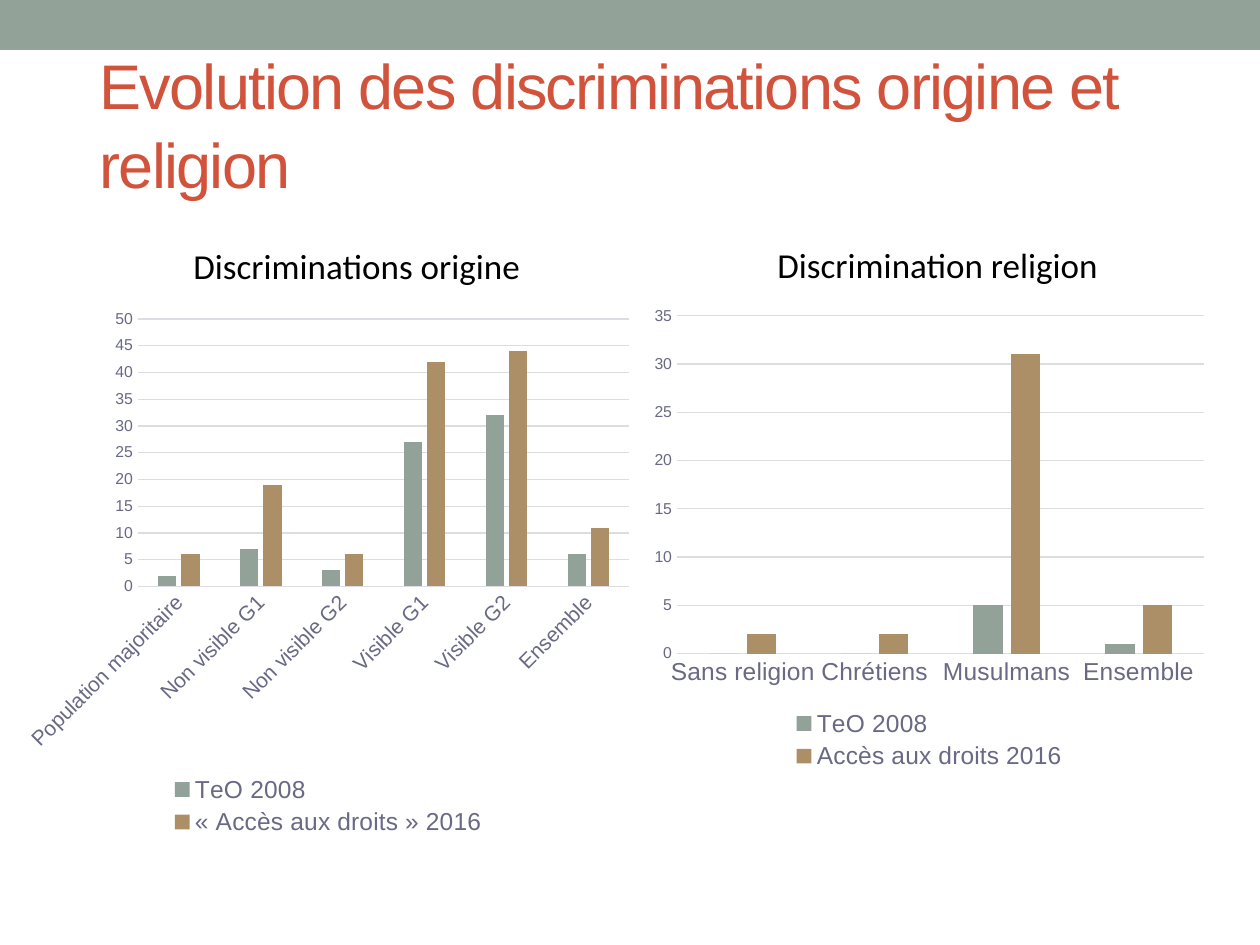
import dataclasses

import pptx
import pptx.chart.data
import pptx.dml.color
import pptx.enum.chart
import pptx.enum.shapes
import pptx.enum.text
import pptx.util

EMU_PER_PX = 914400 / 126
SAGE, TAN, RED = "93A299", "AD8F67", "D2533C"
BLACK, INK, LABEL, GRID = "000000", "292934", "696986", "DCDCE3"


@dataclasses.dataclass
class Box:
    x: int
    y: int
    w: int
    h: int

    def emu(self) -> list[int]:
        return [round(v * EMU_PER_PX) for v in dataclasses.astuple(self)]


@dataclasses.dataclass
class Panel:
    heading: str
    heading_box: Box
    chart_box: Box
    categories: list[str]
    series: dict[str, list[int]]
    axis_max: int
    category_size: int


PANELS = [
    Panel("Discriminations origine", Box(181, 238, 355, 55), Box(15, 299, 627, 542),
          ["Population majoritaire", "Non visible G1", "Non visible G2",
           "Visible G1", "Visible G2", "Ensemble"],
          {"TeO 2008": [2, 7, 3, 27, 32, 6],
           "« Accès aux droits » 2016": [6, 19, 6, 42, 44, 11]}, 50, 12),
    Panel("Discrimination religion", Box(765, 237, 349, 55), Box(643, 297, 573, 478),
          ["Sans religion", "Chrétiens", "Musulmans", "Ensemble"],
          {"TeO 2008": [0, 0, 5, 1],
           "Accès aux droits 2016": [2, 2, 31, 5]}, 35, 14),
]


def rgb(value: str) -> pptx.dml.color.RGBColor:
    return pptx.dml.color.RGBColor.from_string(value)


def set_font(font, size: int, color: str, name: str = "Arial") -> None:
    font.size = pptx.util.Pt(size)
    font.name = name
    font.color.rgb = rgb(color)


def write(tf, text: str, *, size: int, color: str, name: str = "Arial",
          wrap: bool = True, anchor=pptx.enum.text.MSO_ANCHOR.TOP,
          tracking: int = 0, line_spacing: float = 1.0) -> None:
    tf.word_wrap = wrap
    tf.auto_size = pptx.enum.text.MSO_AUTO_SIZE.NONE
    tf.vertical_anchor = anchor
    p = tf.paragraphs[0]
    p.alignment = pptx.enum.text.PP_ALIGN.LEFT
    p.line_spacing = line_spacing
    r = p.add_run()
    r.text = text
    set_font(r.font, size, color, name)
    if tracking:
        r.font._element.set("spc", str(tracking))


def style_line(line, color: str) -> None:
    line.color.rgb = rgb(color)
    line.width = pptx.util.Pt(0.75)


def add_band(s, box: Box, color: str) -> None:
    sp = s.shapes.add_shape(pptx.enum.shapes.MSO_SHAPE.RECTANGLE, *box.emu())
    sp.shadow.inherit = False
    sp.fill.solid()
    sp.fill.fore_color.rgb = rgb(color)
    sp.line.fill.background()


def add_column_chart(s, panel: Panel) -> None:
    data = pptx.chart.data.CategoryChartData()
    data.categories = panel.categories
    for name, values in panel.series.items():
        data.add_series(name, values)
    chart = s.shapes.add_chart(pptx.enum.chart.XL_CHART_TYPE.COLUMN_CLUSTERED,
                               *panel.chart_box.emu(), data).chart
    set_font(chart.font, 10, INK)
    chart.has_title = False

    # Legend
    chart.has_legend = True
    chart.legend.position = pptx.enum.chart.XL_LEGEND_POSITION.BOTTOM
    chart.legend.include_in_layout = False
    set_font(chart.legend.font, 14, LABEL)

    # Columns
    plot = chart.plots[0]
    plot.gap_width, plot.overlap = 219, -27
    plot.vary_by_categories = False
    for series, color in zip(plot.series, (SAGE, TAN)):
        series.format.fill.solid()
        series.format.fill.fore_color.rgb = rgb(color)

    # Axes
    cat, val = chart.category_axis, chart.value_axis
    for axis, size in ((cat, panel.category_size), (val, 9)):
        axis.major_tick_mark = pptx.enum.chart.XL_TICK_MARK.NONE
        axis.minor_tick_mark = pptx.enum.chart.XL_TICK_MARK.NONE
        set_font(axis.tick_labels.font, size, LABEL)
    style_line(cat.format.line, GRID)
    # This rotation value lets the labels turn only when they need to
    cat._element.txPr.bodyPr.set("rot", "-60000000")
    val.format.line.fill.background()
    val.minimum_scale, val.maximum_scale, val.major_unit = 0, panel.axis_max, 5
    val.has_major_gridlines = True
    style_line(val.major_gridlines.format.line, GRID)


def main() -> None:
    prs = pptx.Presentation()
    prs.slide_width, prs.slide_height = Box(0, 0, 1260, 945).emu()[2:]
    s = prs.slides.add_slide(prs.slide_layouts[5])

    # Top band and title
    add_band(s, Box(0, 0, 1260, 50), SAGE)
    title = s.shapes.title
    title.left, title.top, title.width, title.height = Box(87, 69, 1086, 106).emu()
    write(title.text_frame, "Evolution des discriminations origine et religion",
          size=36, color=RED, anchor=pptx.enum.text.MSO_ANCHOR.MIDDLE,
          tracking=-100, line_spacing=1.05)

    # Charts with their headings
    for panel in PANELS:
        add_column_chart(s, panel)
        tb = s.shapes.add_textbox(*panel.heading_box.emu())
        write(tb.text_frame, panel.heading, size=20, color=BLACK,
              name="Calibri", wrap=False)

    prs.save("out.pptx")


if __name__ == "__main__":
    main()
